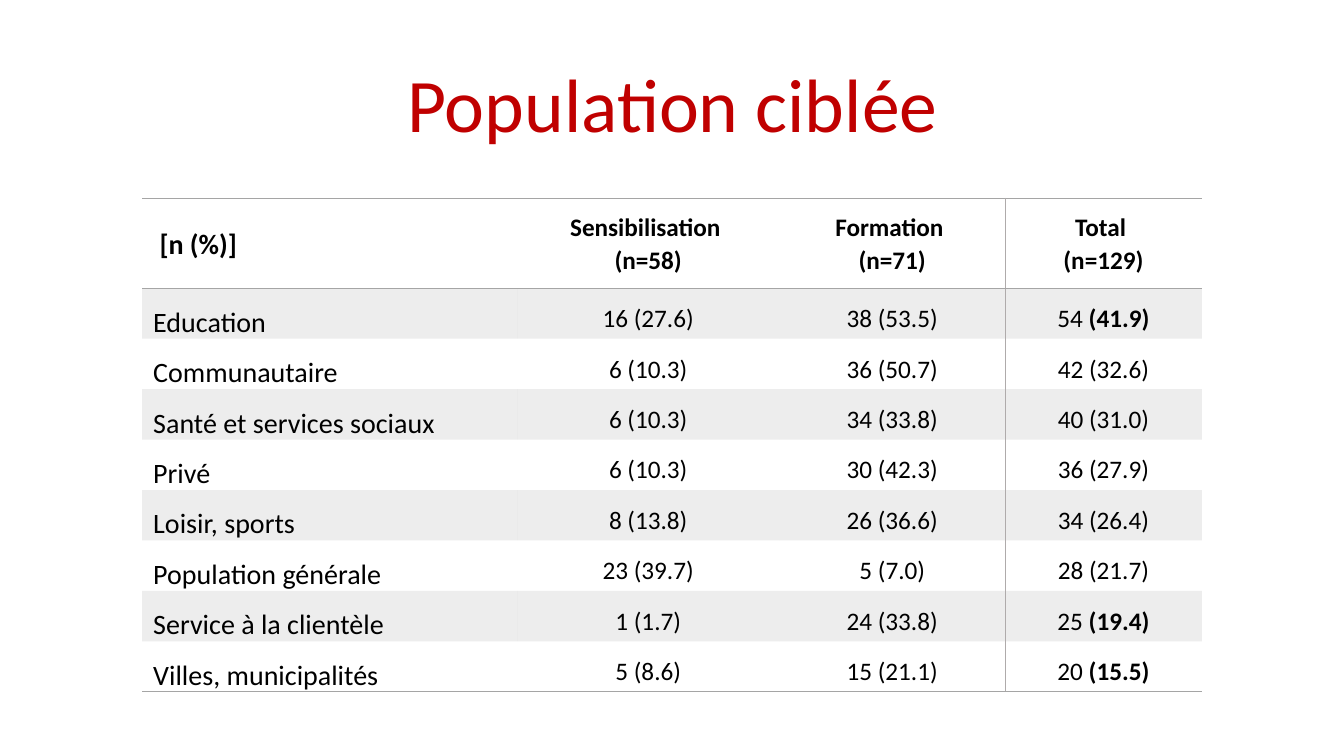
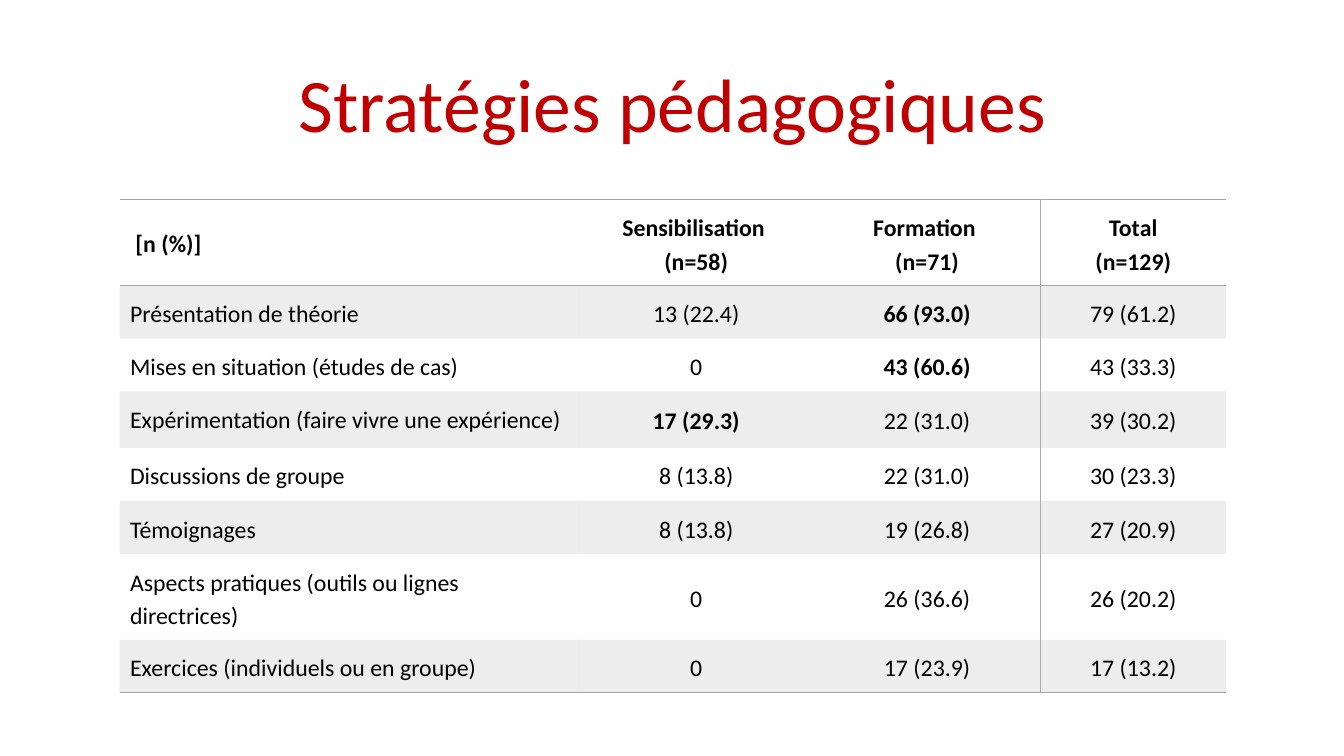
from lxml import etree
from pptx import Presentation
from pptx.dml.color import RGBColor
from pptx.enum.text import MSO_ANCHOR, PP_ALIGN
from pptx.oxml.ns import qn
from pptx.util import Emu, Pt

LEFT, CENTER = PP_ALIGN.LEFT, PP_ALIGN.CENTER
TOP, MIDDLE, BOTTOM = MSO_ANCHOR.TOP, MSO_ANCHOR.MIDDLE, MSO_ANCHOR.BOTTOM
BLANK_LAYOUT = 6
TOTAL_COLUMN = 3

POPULATION = [
    (" [n (%)]", "Sensibilisation \n(n=58)", "Formation \n(n=71)", "Total \n(n=129)"),
    ("Education", "16 (27.6)", "38 (53.5)", "54 *(41.9)"),
    ("Communautaire", "6 (10.3)", "36 (50.7)", "42 (32.6)"),
    ("Santé et services sociaux", "6 (10.3)", "34 (33.8)", "40 (31.0)"),
    ("Privé", "6 (10.3)", "30 (42.3)", "36 (27.9)"),
    ("Loisir, sports", "8 (13.8)", "26 (36.6)", "34 (26.4)"),
    ("Population générale", "23 (39.7)", "5 (7.0)", "28 (21.7)"),
    ("Service à la clientèle", "1 (1.7)", "24 (33.8)", "25 *(19.4)"),
    ("Villes, municipalités", "5 (8.6)", "15 (21.1)", "20 *(15.5)"),
]
STRATEGIES = [
    (" [n (%)]", "Sensibilisation \n(n=58)", "Formation \n(n=71)", "Total\n(n=129)"),
    ("Présentation de théorie", "13 (22.4)", "*66 (93.0)", "79 (61.2)"),
    ("Mises en situation (études de cas)", "0", "*43 (60.6)", "43 (33.3)"),
    ("Expérimentation (faire vivre une expérience)", "*17 (29.3)", "22 (31.0)", "39 (30.2)"),
    ("Discussions de groupe", "8 (13.8)", "22 (31.0)", "30 (23.3)"),
    ("Témoignages", "8 (13.8)", "19 (26.8)", "27 (20.9)"),
    ("Aspects pratiques (outils ou lignes directrices)", "0", "26 (36.6)", "26 (20.2)"),
    ("Exercices (individuels ou en groupe)", "0", "17 (23.9)", "17 (13.2)"),
]


def px(length):
    return Emu(length * 9144)


def color(value):
    return RGBColor.from_string(value)


class Deck:
    """Holds the shared style and the current slide."""

    font = "Calibri"
    title_color = "C00000"
    text_color = "000000"
    band_color = "A5A5A5"
    band_alpha = 20
    rule = ("A5A5A5", 1)
    divider = ("AFABAB", 0.25)

    def __init__(self):
        self.presentation = Presentation()
        self.presentation.slide_width = px(1333)
        self.presentation.slide_height = px(750)
        self.slide = None

    def new_slide(self, title):
        layout = self.presentation.slide_layouts[BLANK_LAYOUT]
        self.slide = self.presentation.slides.add_slide(layout)
        frame = self.slide.shapes.add_textbox(px(58), px(51), px(1218), px(102)).text_frame
        frame.word_wrap = True
        frame.vertical_anchor = BOTTOM
        self.paragraph(frame.paragraphs[0], title, 54, self.title_color, CENTER, 0.9)

    def paragraph(self, paragraph, text, size, text_color, alignment, spacing, bold=False):
        paragraph.alignment = alignment
        paragraph.line_spacing = spacing
        for position, part in enumerate(text.split("*")):
            if part:
                run = paragraph.add_run()
                run.text = part
                run.font.name = self.font
                run.font.size = Pt(size)
                run.font.bold = bold or position == 1
                run.font.color.rgb = color(text_color)

    def table(self, rows, left, top, widths, heights, margins, label_size, value_size,
              header_spacing, body_spacing, value_anchor):
        table = self.slide.shapes.add_table(
            len(rows), len(widths), px(left), px(top), px(sum(widths)), px(sum(heights))).table
        table.horz_banding = False
        table.first_row = False
        for column, width in zip(table.columns, widths):
            column.width = px(width)
        for row, height in zip(table.rows, heights):
            row.height = px(height)
        for row_index, row in enumerate(rows):
            header = row_index == 0
            spacing = header_spacing if header else body_spacing
            for column_index, text in enumerate(row):
                label = column_index == 0
                cell = table.cell(row_index, column_index)
                cell.margin_left = cell.margin_right = px(margins[0])
                cell.margin_top = cell.margin_bottom = px(margins[1])
                cell.vertical_anchor = MIDDLE if header else TOP if label else value_anchor
                frame = cell.text_frame
                for line_index, line in enumerate(text.split("\n")):
                    paragraph = frame.add_paragraph() if line_index else frame.paragraphs[0]
                    self.paragraph(paragraph, line, label_size if label else value_size,
                                   self.text_color, LEFT if label else CENTER, spacing, header)
                self.band(cell, row_index % 2 == 1)
                self.borders(cell, row_index, column_index, len(rows))

    def band(self, cell, filled):
        if not filled:
            cell.fill.background()
            return
        cell.fill.solid()
        cell.fill.fore_color.rgb = color(self.band_color)
        value = next(cell._tc.iter(qn("a:srgbClr")))
        for value in cell._tc.tcPr.iter(qn("a:srgbClr")):
            etree.SubElement(value, qn("a:alpha"), val=str(self.band_alpha * 1000))

    def borders(self, cell, row, column, row_count):
        ruled = (0, 1, row_count)
        edges = {
            "a:lnL": self.divider if column == TOTAL_COLUMN else None,
            "a:lnR": self.divider if column + 1 == TOTAL_COLUMN else None,
            "a:lnT": self.rule if row in ruled else None,
            "a:lnB": self.rule if row + 1 in ruled else None,
        }
        properties = cell._tc.get_or_add_tcPr()
        for position, (tag, style) in enumerate(edges.items()):
            line = etree.Element(qn(tag))
            properties.insert(position, line)
            if style:
                line_color, width = style
                line.set("w", str(Pt(width)))
                fill = etree.SubElement(line, qn("a:solidFill"))
                etree.SubElement(fill, qn("a:srgbClr"), val=line_color)
            else:
                etree.SubElement(line, qn("a:noFill"))


def main():
    deck = Deck()
    deck.new_slide("Population ciblée")
    deck.table(POPULATION, 141, 197, [372, 260, 224, 195], [89] + [47] * 8, (11, 0),
               label_size=20, value_size=18, header_spacing=1.07, body_spacing=1.5,
               value_anchor=TOP)
    deck.new_slide("Stratégies pédagogiques")
    deck.table(STRATEGIES, 119, 198, [455, 233, 225, 184],
               [67, 48, 48, 56, 48, 48, 57, 48], (10, 10),
               label_size=17, value_size=17, header_spacing=1.15, body_spacing=1.15,
               value_anchor=MIDDLE)
    deck.presentation.save("out.pptx")


if __name__ == "__main__":
    main()
